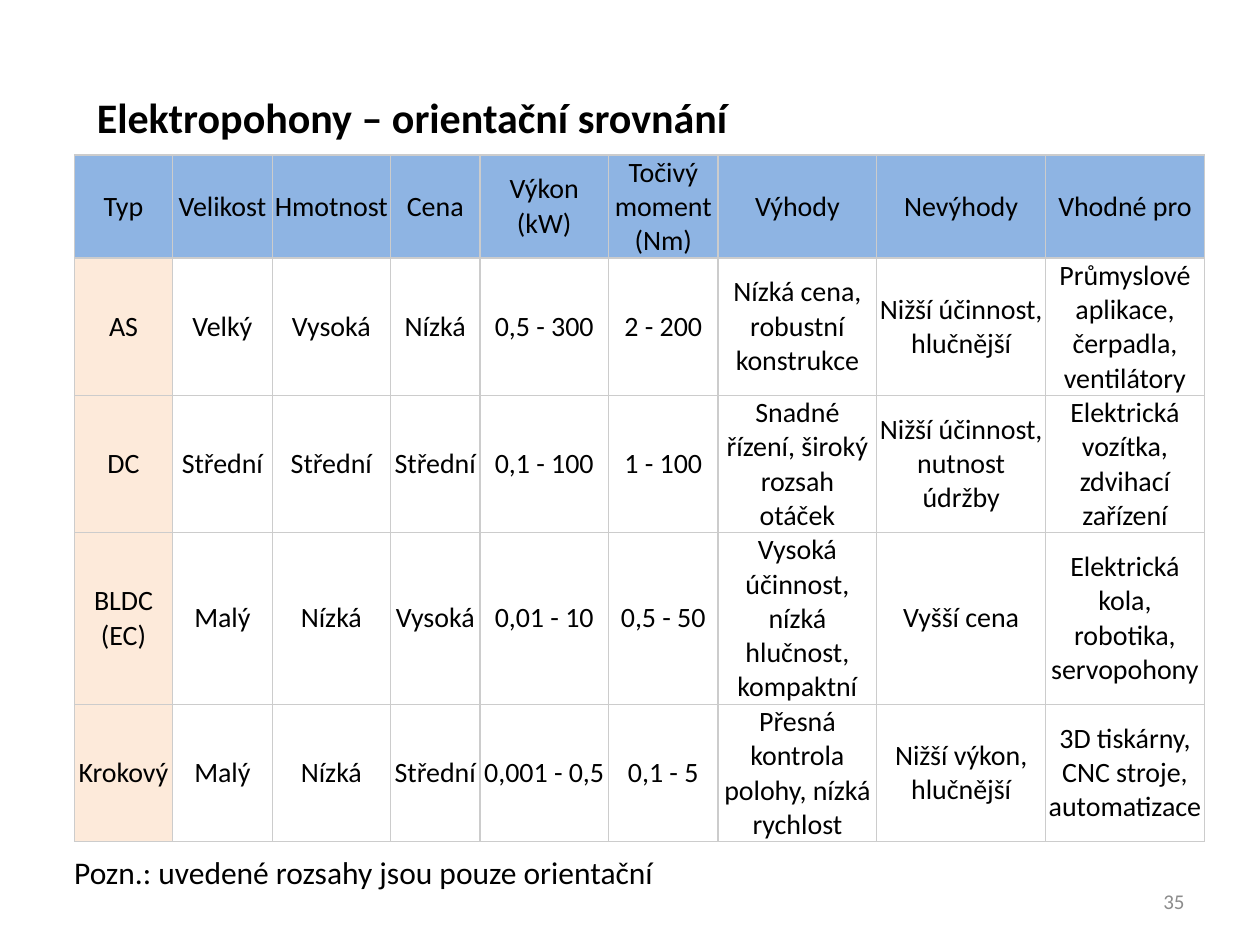
import pptx
import pptx.util
import pptx.dml.color
import pptx.enum.text
import pptx.oxml.ns
import lxml.etree

WIDE = pptx.util.Inches(10)
HIGH = pptx.util.Inches(7.5)
FONT = "Calibri"
HUES = {"ink": "000000", "gray": "8C8C8C", "head": "8EB4E3", "side": "FDEADA", "line": "CCCCCC"}
ALIGN = pptx.enum.text.PP_ALIGN
MIDDLE = pptx.enum.text.MSO_ANCHOR.MIDDLE

COLS = [78, 79, 94, 71, 102, 87, 126, 134, 126]
LINES = [3, 4, 4, 5, 4]
DRIVES = [
    ["Typ", "Velikost", "Hmotnost", "Cena", "Výkon (kW)", "Točivý moment (Nm)",
     "Výhody", "Nevýhody", "Vhodné pro"],
    ["AS", "Velký", "Vysoká", "Nízká", "0,5 - 300", "2 - 200",
     "Nízká cena, robustní konstrukce", "Nižší účinnost, hlučnější",
     "Průmyslové aplikace, čerpadla, ventilátory"],
    ["DC", "Střední", "Střední", "Střední", "0,1 - 100", "1 - 100",
     "Snadné řízení, široký rozsah otáček", "Nižší účinnost, nutnost údržby",
     "Elektrická vozítka, zdvihací zařízení"],
    ["BLDC (EC)", "Malý", "Nízká", "Vysoká", "0,01 - 10", "0,5 - 50",
     "Vysoká účinnost, nízká hlučnost, kompaktní", "Vyšší cena",
     "Elektrická kola, robotika, servopohony"],
    ["Krokový", "Malý", "Nízká", "Střední", "0,001 - 0,5", "0,1 - 5",
     "Přesná kontrola polohy, nízká rychlost", "Nižší výkon, hlučnější",
     "3D tiskárny, CNC stroje, automatizace"],
]


def share(left, top, width, height):
    return (int(WIDE * left / 100), int(HIGH * top / 100),
            int(WIDE * width / 100), int(HIGH * height / 100))


def color(name):
    return pptx.dml.color.RGBColor.from_string(HUES[name])


def write(frame, text, size, align, hue="ink", bold=False):
    para = frame.paragraphs[0]
    para.alignment = align
    run = para.add_run()
    run.text = text
    run.font.name = FONT
    run.font.size = pptx.util.Pt(size)
    run.font.bold = bold
    run.font.color.rgb = color(hue)


def label(slide, box, text, size, align=ALIGN.LEFT, hue="ink", bold=False, anchor=None):
    frame = slide.shapes.add_textbox(*box).text_frame
    frame.word_wrap = True
    frame.vertical_anchor = anchor
    write(frame, text, size, align, hue, bold)


def border(cell):
    name = pptx.oxml.ns.qn
    props = cell._tc.get_or_add_tcPr()
    for side in ("a:lnL", "a:lnR", "a:lnT", "a:lnB"):
        line = lxml.etree.SubElement(props, name(side), w=str(pptx.util.Pt(0.75)))
        fill = lxml.etree.SubElement(line, name("a:solidFill"))
        lxml.etree.SubElement(fill, name("a:srgbClr"), val=HUES["line"])


def paint(cell, hue):
    if hue:
        cell.fill.solid()
        cell.fill.fore_color.rgb = color(hue)
    else:
        cell.fill.background()


def grid(slide, box, data):
    table = slide.shapes.add_table(len(data), len(COLS), *box).table
    table.first_row = False
    table.horz_banding = False
    for col, part in zip(table.columns, COLS):
        col.width = int(box[2] * part / sum(COLS))
    for row, part in zip(table.rows, LINES):
        row.height = int(box[3] * part / sum(LINES))
    for r, texts in enumerate(data):
        for c, text in enumerate(texts):
            cell = table.cell(r, c)
            cell.margin_left = cell.margin_right = pptx.util.Pt(1.2)
            cell.margin_top = cell.margin_bottom = pptx.util.Pt(0.4)
            cell.vertical_anchor = MIDDLE
            border(cell)
            paint(cell, "head" if r == 0 else "side" if c == 0 else None)
            write(cell.text_frame, text, 16, ALIGN.CENTER)


def main():
    deck = pptx.Presentation()
    deck.slide_width = WIDE
    deck.slide_height = HIGH
    slide = deck.slides.add_slide(deck.slide_layouts[6])
    label(slide, share(71.7, 92.67, 23.3, 5.33), "35", 12, ALIGN.RIGHT, "gray", anchor=MIDDLE)
    label(slide, share(6.7, 9.07, 88.2, 6.67), "Elektropohony – orientační srovnání", 24, bold=True)
    grid(slide, share(5.9, 16.4, 89.7, 72.67), DRIVES)
    label(slide, share(4.9, 89.6, 49.8, 5.33), "Pozn.: uvedené rozsahy jsou pouze orientační", 18)
    deck.save("out.pptx")


if __name__ == "__main__":
    main()
